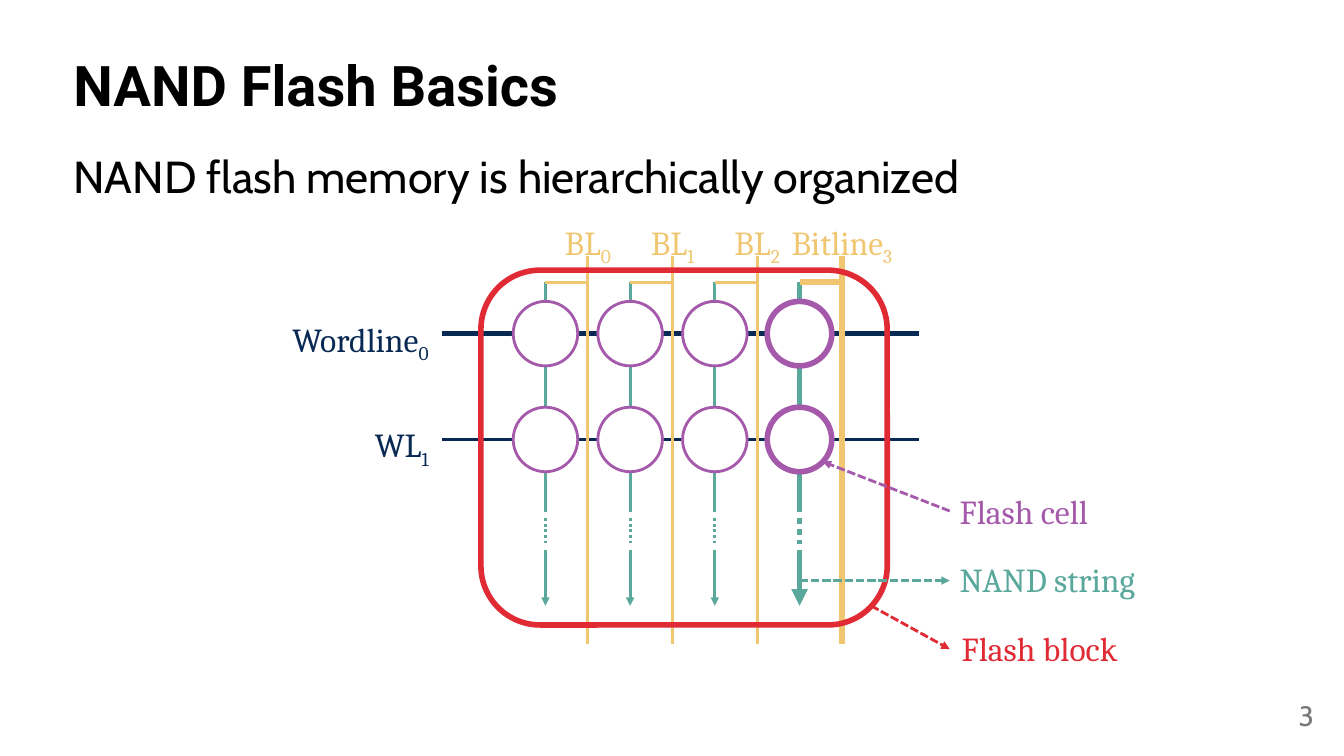
from lxml import etree
from pptx import Presentation, util as u
from pptx.dml.color import RGBColor
from pptx.enum import dml, shapes, text
from pptx.oxml.ns import qn

COLORS = {"black": "000000", "gray": "797979", "wordline": "082954",
          "string": "5AA89C", "cell": "A559AB", "bitline": "F0C671",
          "block": "E02B35", "white": "FFFFFF"}
THIN, THICK = 2, 4
COLUMN_PITCH, ROW_PITCH, CELL_SIZE = 0.84, 1.05, 0.64
LABEL_HEIGHT = 0.5
LEFT, CENTER, RIGHT = text.PP_ALIGN.LEFT, text.PP_ALIGN.CENTER, text.PP_ALIGN.RIGHT
TOP, MIDDLE = text.MSO_ANCHOR.TOP, text.MSO_ANCHOR.MIDDLE


def rgb(name):
    return RGBColor.from_string(COLORS[name])


def add_text(slide, box, words, subscript="", size=24, font="Cambria", color="black",
             bold=False, align=LEFT, anchor=TOP, wrap=False, spacing=None):
    frame = slide.shapes.add_textbox(*map(u.Inches, box)).text_frame
    frame.word_wrap = wrap
    frame.auto_size = text.MSO_AUTO_SIZE.NONE if wrap else text.MSO_AUTO_SIZE.SHAPE_TO_FIT_TEXT
    frame.vertical_anchor = anchor
    paragraph = frame.paragraphs[0]
    paragraph.alignment = align
    if spacing:
        paragraph.line_spacing = spacing
    for part, baseline in ((words, None), (subscript, "-25000")):
        if not part:
            continue
        run = paragraph.add_run()
        run.text = part
        run.font.size, run.font.name, run.font.bold = u.Pt(size), font, bold
        run.font.color.rgb = rgb(color)
        if baseline:
            run.font._element.set("baseline", baseline) if hasattr(run.font, "_element") \
                else run._r.get_or_add_rPr().set("baseline", baseline)


def add_line(slide, start, end, color, width=THIN, dash=None, arrow=False):
    line = slide.shapes.add_connector(
        shapes.MSO_CONNECTOR.STRAIGHT, *map(u.Inches, (*start, *end)))
    line.line.color.rgb = rgb(color)
    line.line.width = u.Pt(width)
    if dash:
        line.line.dash_style = dash
    properties = line._element.spPr
    if arrow:
        outline = properties.find(qn("a:ln"))
        etree.SubElement(outline, qn("a:tailEnd"), type="triangle")
    etree.SubElement(properties, qn("a:effectLst"))


def add_outline(slide, kind, box, color, width, fill=None):
    shape = slide.shapes.add_shape(kind, *map(u.Inches, box))
    shape.shadow.inherit = False
    shape.line.color.rgb = rgb(color)
    shape.line.width = u.Pt(width)
    if fill:
        shape.fill.solid()
        shape.fill.fore_color.rgb = rgb(fill)
    else:
        shape.fill.background()


def add_header(slide, box):
    left, top, width, height = box
    title_height = height / 2 + 0.42
    add_text(slide, (left, top, width, title_height), "NAND Flash Basics", size=40,
             font="Roboto", bold=True, anchor=MIDDLE, wrap=True, spacing=0.9)
    add_text(slide, (left, top + 1.34, width, height - 1.34),
             "NAND flash memory is hierarchically organized", size=32,
             font="Cabin", wrap=True, spacing=0.9)


def add_flash_block(slide, box):
    left, top, width, height = box
    columns = [left + 0.64 + COLUMN_PITCH * i for i in range(4)]
    rows = [top + 0.63 + ROW_PITCH * i for i in range(2)]
    widths = [THIN, THIN, THIN, THICK]

    # Wordlines
    for y, name, number, weight in zip(rows, ("Wordline", "WL"), "01", (THICK, THIN)):
        add_line(slide, (left - 0.39, y), (left + width + 0.31, y), "wordline", weight)
        label_width = 1.65 if name == "Wordline" else 0.82
        add_text(slide, (left - 0.42 - label_width, y - 0.2, label_width, LABEL_HEIGHT),
                 name, number, color="wordline", align=RIGHT)

    # NAND strings: solid, dotted, then arrow
    for x, weight in zip(columns, widths):
        add_line(slide, (x, top + 0.12), (x, top + 2.4), "string", weight)
        add_line(slide, (x, top + 2.46), (x, top + 2.72), "string", weight,
                 dash=dml.MSO_LINE.ROUND_DOT)
        add_line(slide, (x, top + 2.78), (x, top + 3.33), "string", weight, arrow=True)

    # Flash cells
    for y in rows:
        for x, weight in zip(columns, widths):
            add_outline(slide, shapes.MSO_SHAPE.OVAL,
                        (x - CELL_SIZE / 2, y - CELL_SIZE / 2, CELL_SIZE, CELL_SIZE),
                        "cell", weight, fill="white")

    # Bitlines
    for i, (x, weight) in enumerate(zip(columns, widths)):
        bitline = x + COLUMN_PITCH / 2
        name, label_width = ("Bitline", 1.27) if i == 3 else ("BL", 0.71)
        add_text(slide, (bitline - label_width / 2, top - 0.53, label_width, LABEL_HEIGHT),
                 name, str(i), color="bitline", align=CENTER)
        add_line(slide, (bitline, top - 0.14), (bitline, top + height + 0.19),
                 "bitline", weight)
        add_line(slide, (x, top + 0.12), (bitline, top + 0.12), "bitline", weight)

    # Block outline
    add_outline(slide, shapes.MSO_SHAPE.ROUNDED_RECTANGLE, box, "block", THICK)


def add_callouts(slide, box):
    left, top, width, height = box
    pitch = height / 3
    callouts = [
        ("Flash cell", "cell", 0, 1.54, (left, top + 0.25), (left - 1.26, top - 0.24)),
        ("NAND string", "string", 0, 2.01, (left - 1.49, top + 0.94), (left, top + 0.94)),
        ("Flash block", "block", 0.02, 1.78, (left - 0.78, top + 1.19), (left, top + 1.62)),
    ]
    for i, (name, color, shift, label_width, start, end) in enumerate(callouts):
        add_line(slide, start, end, color, dash=dml.MSO_LINE.SQUARE_DOT, arrow=True)
        add_text(slide, (left + shift, top + pitch * i, label_width, LABEL_HEIGHT),
                 name, color=color)


def main():
    deck = Presentation()
    deck.slide_width, deck.slide_height = u.Inches(13.33), u.Inches(7.5)
    slide = deck.slides.add_slide(deck.slide_layouts[6])
    add_header(slide, (0.63, 0.15, 12.08, 2.06))
    add_flash_block(slide, (4.77, 2.68, 4.03, 3.52))
    add_callouts(slide, (9.42, 4.82, 2.01, 2.04))
    # Slide number
    add_text(slide, (10.13, 6.9, 3, 0.4), "3", size=20, font="Cabin", color="gray",
             align=RIGHT, anchor=MIDDLE, wrap=True)
    deck.save("out.pptx")


if __name__ == "__main__":
    main()
